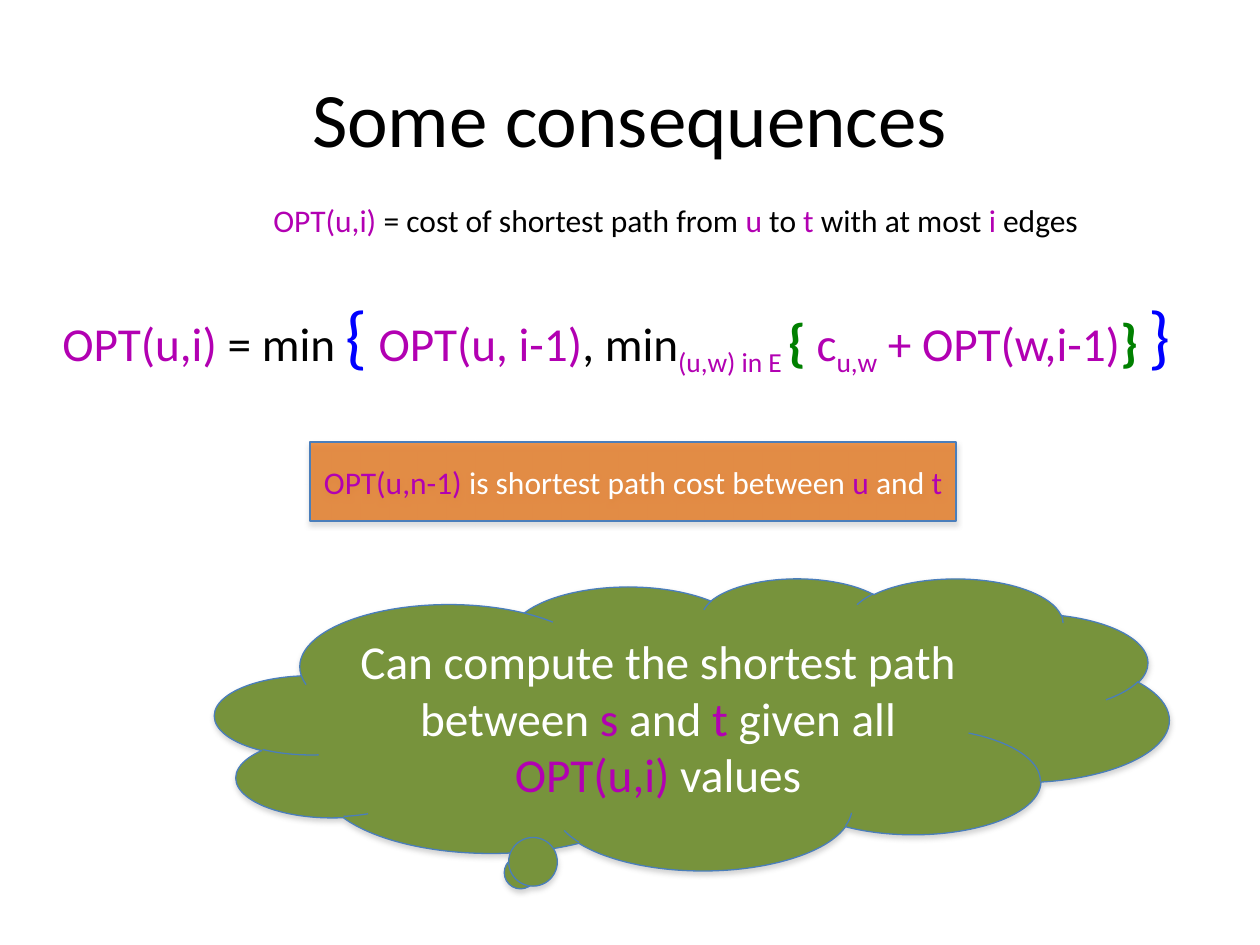
import pptx
import pptx.util
import pptx.oxml.ns
from lxml import etree
from pptx.dml.color import RGBColor
from pptx.enum.shapes import MSO_SHAPE
from pptx.enum.text import MSO_ANCHOR, MSO_AUTO_SIZE, PP_ALIGN

PX = 914400 / 126
FONT = "Calibri"

BLACK = RGBColor(0x00, 0x00, 0x00)
WHITE = RGBColor(0xFF, 0xFF, 0xFF)
PURPLE = RGBColor(0xB2, 0x00, 0xB2)
BLUE = RGBColor(0x00, 0x00, 0xFF)
GREEN = RGBColor(0x00, 0x80, 0x00)
ORANGE = RGBColor(0xE4, 0x6C, 0x0A)
OLIVE = RGBColor(0x77, 0x93, 0x3C)
OUTLINE = RGBColor(0x4A, 0x7E, 0xBB)

SUBSCRIPT = {"subscript": True}
OUTER_BRACE = {"size": 40}
INNER_BRACE = {"size": 30, "bold": True}

# Each run: text, colour, optional formatting
TITLE = [("Some consequences", BLACK)]
DEFINITION = [
    ("OPT(u,i) ", PURPLE),
    ("= cost of shortest path from ", BLACK),
    ("u", PURPLE),
    (" to ", BLACK),
    ("t", PURPLE),
    (" with at most ", BLACK),
    ("i", PURPLE),
    (" edges", BLACK),
]
RECURRENCE = [
    ("OPT(u,i)", PURPLE),
    (" = min ", BLACK),
    ("{", BLUE, OUTER_BRACE),
    (" ", BLACK),
    ("OPT(u, i-1)", PURPLE),
    (", min", BLACK),
    ("(u,w) in E ", PURPLE, SUBSCRIPT),
    ("{", GREEN, INNER_BRACE),
    (" ", BLACK),
    ("c", PURPLE),
    ("u,w", PURPLE, SUBSCRIPT),
    (" + OPT(w,i-1)", PURPLE),
    ("}", GREEN, INNER_BRACE),
    (" ", BLACK),
    ("}", BLUE, OUTER_BRACE),
]
SHORTEST_COST = [
    ("OPT(u,n-1) ", PURPLE),
    ("is shortest path cost between ", WHITE),
    ("u", PURPLE),
    (" and ", WHITE),
    ("t", PURPLE),
]
CONCLUSION = [
    ("Can compute the shortest path between ", WHITE),
    ("s", PURPLE),
    (" and ", WHITE),
    ("t", PURPLE),
    (" given all ", WHITE),
    ("OPT(u,i) ", PURPLE),
    ("values", WHITE),
]


def to_emu(box):
    return [round(length * PX) for length in box]


def add_child(parent, tag, **attributes):
    child = etree.SubElement(parent, pptx.oxml.ns.qn(tag))
    for name, value in attributes.items():
        child.set(name, str(value))
    return child


def write_runs(paragraph, runs, base_size):
    for text, color, *formatting in runs:
        style = formatting[0] if formatting else {}
        run = paragraph.add_run()
        run.text = text
        run.font.name = FONT
        run.font.size = pptx.util.Pt(style.get("size", base_size))
        run.font.bold = style.get("bold", False)
        run.font.color.rgb = color
        if style.get("subscript"):
            run._r.get_or_add_rPr().set("baseline", "-25000")


def fill_frame(shape, runs, size, centered, wrap=True):
    frame = shape.text_frame
    frame.word_wrap = wrap
    frame.vertical_anchor = MSO_ANCHOR.MIDDLE if centered else MSO_ANCHOR.TOP
    paragraph = frame.paragraphs[0]
    paragraph.alignment = PP_ALIGN.CENTER if centered else PP_ALIGN.LEFT
    write_runs(paragraph, runs, size)


def add_formula(slide, box, runs, size):
    """Add a one-line text box that grows with its text."""
    text_box = slide.shapes.add_textbox(*to_emu(box))
    fill_frame(text_box, runs, size, centered=False, wrap=False)
    text_box.text_frame.auto_size = MSO_AUTO_SIZE.SHAPE_TO_FIT_TEXT


def add_soft_shadow(shape):
    shape.shadow.inherit = False
    effects = shape._element.spPr.find(pptx.oxml.ns.qn("a:effectLst"))
    shadow = add_child(
        effects, "a:outerShdw", blurRad=pptx.util.Pt(3.1),
        dist=pptx.util.Pt(1.8), dir=90 * 60000, rotWithShape=0,
    )
    color = add_child(shadow, "a:srgbClr", val="808080")
    add_child(color, "a:alpha", val=35000)


def add_callout(slide, kind, box, fill, runs, size):
    shape = slide.shapes.add_shape(kind, *to_emu(box))
    shape.fill.solid()
    shape.fill.fore_color.rgb = fill
    shape.line.color.rgb = OUTLINE
    shape.line.width = pptx.util.Pt(0.75)
    add_soft_shadow(shape)
    fill_frame(shape, runs, size, centered=True)
    return shape


def set_opacity(shape, percent):
    solid_fill = shape._element.spPr.find(pptx.oxml.ns.qn("a:solidFill"))
    add_child(solid_fill[0], "a:alpha", val=percent * 1000)


def main():
    presentation = pptx.Presentation()
    presentation.slide_width, presentation.slide_height = to_emu((1260, 945))
    slide = presentation.slides.add_slide(presentation.slide_layouts[6])

    title = slide.shapes.add_textbox(*to_emu((63, 38, 1134, 158)))
    fill_frame(title, TITLE, 44, centered=True)

    add_formula(slide, (261, 195, 832, 50), DEFINITION, 18)
    add_formula(slide, (50, 285, 1173, 97), RECURRENCE, 27)

    cost_box = add_callout(slide, MSO_SHAPE.RECTANGLE, (310, 442, 646, 79),
                           ORANGE, SHORTEST_COST, 18)
    set_opacity(cost_box, 72)

    cloud = add_callout(slide, MSO_SHAPE.CLOUD_CALLOUT, (215, 578, 954, 292),
                        OLIVE, CONCLUSION, 27)
    cloud.adjustments[0] = -0.18
    cloud.adjustments[1] = 0.51

    presentation.save("out.pptx")


if __name__ == "__main__":
    main()
